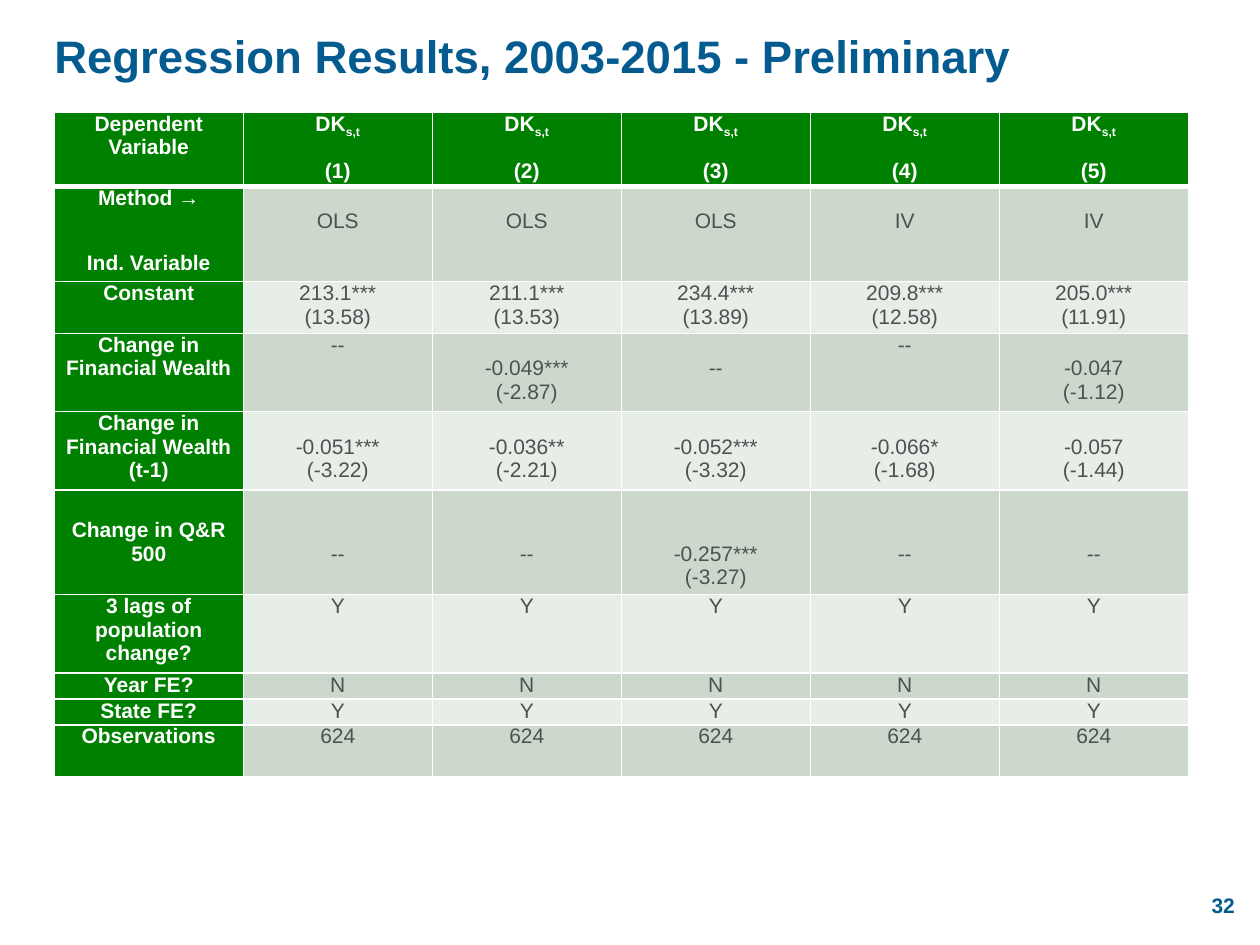
import pptx
import pptx.util
import pptx.dml.color
import pptx.enum.text
import pptx.oxml
import pptx.oxml.ns

Pt = pptx.util.Pt
ALIGN = pptx.enum.text.PP_ALIGN
ANCHOR = pptx.enum.text.MSO_ANCHOR

THEME = {
    "font": "Arial", "title": 26, "body": 12,
    "blue": "045B8F", "green": "008000", "white": "FFFFFF", "grey": "4F5052",
    "bands": ("CCD8CC", "E7EDE7"),
}

TITLE = "Regression Results, 2003-2015 - Preliminary"
FIRST_NUMBER = 32
SUBSCRIPT = "s,t"

# Each row: height, label, lines of space above each value, values
ROWS = [
    (42.5, "Dependent Variable", (0,) * 5,
     [f"DK{SUBSCRIPT}\n({n})" for n in range(1, 6)]),
    (54.5, "Method →\nInd. Variable", (1,) * 5, ["OLS", "OLS", "OLS", "IV", "IV"]),
    (29.5, "Constant", (0,) * 5,
     ["213.1***\n(13.58)", "211.1***\n(13.53)", "234.4***\n(13.89)",
      "209.8***\n(12.58)", "205.0***\n(11.91)"]),
    (44.8, "Change in Financial Wealth", (0, 1, 1, 0, 1),
     ["--", "-0.049***\n(-2.87)", "--", "--", "-0.047\n(-1.12)"]),
    (44.8, "Change in Financial Wealth (t-1)", (1,) * 5,
     ["-0.051***\n(-3.22)", "-0.036**\n(-2.21)", "-0.052***\n(-3.32)",
      "-0.066*\n(-1.68)", "-0.057\n(-1.44)"]),
    (59.8, "Change in Q&R 500", (1, 1, 2, 1, 1),
     ["--", "--", "-0.257***\n(-3.27)", "--", "--"]),
    (44.8, "3 lags of population change?", (0,) * 5, ["Y"] * 5),
    (14.8, "Year FE?", (0,) * 5, ["N"] * 5),
    (14.8, "State FE?", (0,) * 5, ["Y"] * 5),
    (29.6, "Observations", (0,) * 5, ["624"] * 5),
]
HEADER, METHOD, INDEX = 0, 1, 5
SECOND_LINE_GAP = {(HEADER, False): 12, (METHOD, True): 24}

LEFT, TOP, WIDTH, LINE = 31, 64, 648, 13.4


def rgb(name):
    return pptx.dml.color.RGBColor.from_string(THEME.get(name, name))


def style(font, size, color, bold):
    font.name, font.size, font.bold = THEME["font"], Pt(size), bold
    font.color.rgb = rgb(color)


def set_borders(cell, row):
    tcPr = cell._tc.get_or_add_tcPr()
    for side in "LRTB":
        thick = (row, side) in ((HEADER, "B"), (METHOD, "T"))
        tcPr.append(pptx.oxml.parse_xml(
            f'<a:ln{side} {pptx.oxml.ns.nsdecls("a")} w="{Pt(3 if thick else 1)}">'
            f'<a:solidFill><a:srgbClr val="{THEME["white"]}"/></a:solidFill></a:ln{side}>'))


def fill_cell(cell, row, text, lead, is_label):
    strong = is_label or row == HEADER
    set_borders(cell, row)
    cell.fill.solid()
    cell.fill.fore_color.rgb = rgb("green" if strong else THEME["bands"][(row + 1) % 2])
    cell.margin_left = cell.margin_right = Pt(5)
    cell.margin_top, cell.margin_bottom = Pt(lead * LINE), 0
    cell.vertical_anchor = ANCHOR.MIDDLE if row == INDEX else ANCHOR.TOP
    tf = cell.text_frame
    tf.text = text
    for i, p in enumerate(tf.paragraphs):
        p.alignment = ALIGN.CENTER
        if i:
            p.space_before = Pt(SECOND_LINE_GAP.get((row, is_label), 0))
        if p.text.endswith(SUBSCRIPT):
            p.runs[0].text = p.text.removesuffix(SUBSCRIPT)
            r = p.add_run()
            r.text = SUBSCRIPT
            r._r.get_or_add_rPr().set("baseline", "-25000")
        for r in p.runs:
            style(r.font, THEME["body"], "white" if strong else "grey", strong)


def main():
    prs = pptx.Presentation()
    prs.slide_width, prs.slide_height = Pt(720), Pt(540)
    prs.element.set("firstSlideNum", str(FIRST_NUMBER))
    s = prs.slides.add_slide(prs.slide_layouts[5])

    # Title
    sp = s.shapes.title
    sp.left, sp.top, sp.width, sp.height = Pt(LEFT), 0, Pt(WIDTH), Pt(TOP)
    tf = sp.text_frame
    tf.text = TITLE
    tf.margin_left = tf.margin_right = tf.margin_bottom = 0
    tf.margin_top = Pt(5)
    tf.vertical_anchor = ANCHOR.MIDDLE
    p = tf.paragraphs[0]
    p.alignment, p.line_spacing = ALIGN.LEFT, Pt(25)
    style(p.runs[0].font, THEME["title"], "blue", True)

    # Regression table
    columns = 1 + len(ROWS[0][3])
    height = sum(row[0] for row in ROWS)
    table = s.shapes.add_table(len(ROWS), columns, Pt(LEFT), Pt(TOP),
                               Pt(WIDTH), Pt(height)).table
    table.horz_banding = False
    for column in table.columns:
        column.width = Pt(WIDTH / columns)
    for i, (row_height, label, leads, values) in enumerate(ROWS):
        table.rows[i].height = Pt(row_height)
        for j, (text, lead) in enumerate(zip([label, *values], [0, *leads])):
            fill_cell(table.cell(i, j), i, text, lead, j == 0)

    # Slide number field
    sp = s.shapes.add_textbox(Pt(678), Pt(488), Pt(42), Pt(58))
    tf = sp.text_frame
    tf.word_wrap = True
    tf.vertical_anchor = ANCHOR.MIDDLE
    p = tf.paragraphs[0]
    p.alignment = ALIGN.CENTER
    p._p.append(pptx.oxml.parse_xml(
        f'<a:fld {pptx.oxml.ns.nsdecls("a")} type="slidenum" '
        'id="{B6F15528-21DE-4FAA-801E-634DDDAF4B2B}">'
        f'<a:rPr lang="en-US" sz="{THEME["body"] * 100}" b="1"><a:solidFill>'
        f'<a:srgbClr val="{THEME["blue"]}"/></a:solidFill>'
        f'<a:latin typeface="{THEME["font"]}"/></a:rPr>'
        f'<a:t>{FIRST_NUMBER}</a:t></a:fld>'))

    prs.save("out.pptx")


if __name__ == "__main__":
    main()
